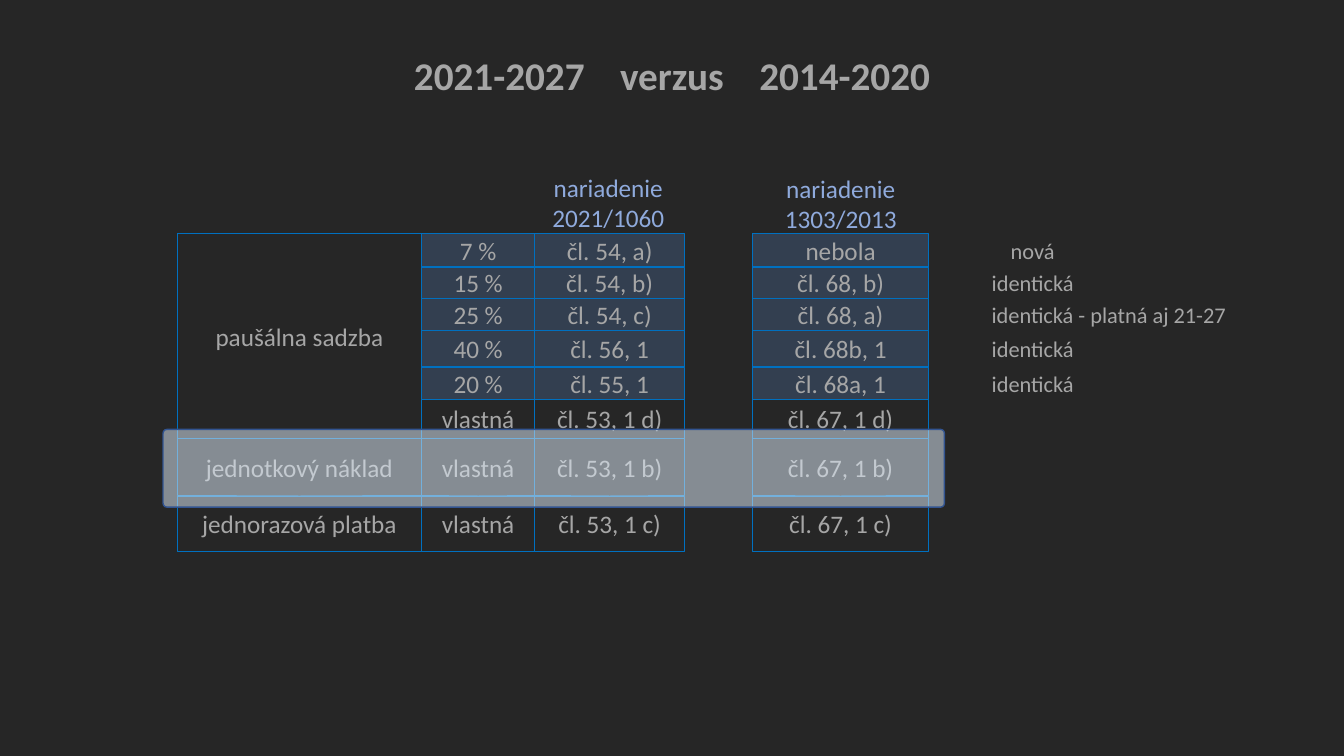
from pptx import Presentation
from pptx.dml.color import RGBColor
from pptx.enum.shapes import MSO_SHAPE
from pptx.enum.text import MSO_ANCHOR, MSO_AUTO_SIZE, PP_ALIGN
from pptx.oxml import parse_xml
from pptx.oxml.ns import nsdecls
from pptx.util import Cm, Pt

RECT, ROUND = MSO_SHAPE.RECTANGLE, MSO_SHAPE.ROUNDED_RECTANGLE
TOP, MIDDLE = MSO_ANCHOR.TOP, MSO_ANCHOR.MIDDLE
LEFT, CENTER = PP_ALIGN.LEFT, PP_ALIGN.CENTER
FIXED = MSO_AUTO_SIZE.NONE

FONT = "Calibri"
HUES = {
    "back": "262626", "text": "A6A6A6", "head": "8FAADC", "fill": "333F50",
    "line": "0070C0", "band": "DEEBF7", "edge": "325491",
}

TITLE = ["2021-2027", " ", "verzus", " ", "2014-2020"]
GAP = 19

EDGES = [5.89, 6.73, 7.53, 8.33, 9.25, 10.06, 11.05, 12.5, 13.89]
SHADED = 5

KINDS = [
    ("paušálna sadzba", 0, 6),
    ("jednotkový náklad", 6, 7),
    ("jednorazová platba", 7, 8),
]
KIND_COL = (4.47, 6.15)

COLUMNS = [
    (10.62, 2.86, ["7 %", "15 %", "25 %", "40 %", "20 %",
                   "vlastná", "vlastná", "vlastná"]),
    (13.48, 3.77, ["čl. 54, a)", "čl. 54, b)", "čl. 54, c)", "čl. 56, 1",
                   "čl. 55, 1", "čl. 53, 1 d)", "čl. 53, 1 b)", "čl. 53, 1 c)"]),
    (18.96, 4.45, ["nebola", "čl. 68, b)", "čl. 68, a)", "čl. 68b, 1",
                   "čl. 68a, 1", "čl. 67, 1 d)", "čl. 67, 1 b)", "čl. 67, 1 c)"]),
]

HEADS = [
    (13.44, 4.22, ["nariadenie", "2021/1060"]),
    (19.3, 4.24, ["nariadenie", "1303/2013"]),
]
HEAD_SIZE = (3.78, 1.8)

NOTES = ["nová", "identická", "identická - platná aj 21-27",
         "identická", "identická"]
LONG = 2
NOTE_COL = (23.8, 4.45)
LONG_COL = (24.74, 6.65)

BAND = (4.11, 10.82, 19.69, 1.96)


def tint(name):
    return RGBColor.from_string(HUES[name])


def add_run(para, text, size, hue, bold=False):
    run = para.add_run()
    run.text = text
    run.font.name = FONT
    run.font.size = Pt(size)
    run.font.bold = bold
    run.font.color.rgb = tint(hue)
    return run


def write(shape, lines, size, hue="text", align=CENTER, anchor=MIDDLE):
    frame = shape.text_frame
    frame.word_wrap = True
    frame.vertical_anchor = anchor
    for i, line in enumerate(lines):
        para = frame.add_paragraph() if i else frame.paragraphs[0]
        para.alignment = align
        add_run(para, line, size, hue)


def add_box(slide, kind, box, fill, line, width):
    shape = slide.shapes.add_shape(kind, *map(Cm, box))
    shape.shadow.inherit = False
    if fill:
        shape.fill.solid()
        shape.fill.fore_color.rgb = tint(fill)
    else:
        shape.fill.background()
    shape.line.color.rgb = tint(line)
    shape.line.width = Pt(width)
    return shape


def add_cell(slide, text, col, first, last, fill=None):
    left, width = col
    box = (left, EDGES[first], width, EDGES[last] - EDGES[first])
    write(add_box(slide, RECT, box, fill, "line", 0.75), [text], 18)


def add_title(slide):
    title = slide.shapes.title
    title.left, title.top, title.width, title.height = map(
        Cm, (2.33, 0.56, 29.21, 2.8))
    frame = title.text_frame
    frame.auto_size = FIXED
    frame.vertical_anchor = MIDDLE
    para = frame.paragraphs[0]
    para.alignment = CENTER
    para.line_spacing = 0.9
    for part in TITLE:
        run = add_run(para, part, 28, "text", True)
        if part == " ":
            run._r.get_or_add_rPr().set("spc", str(GAP * 100))


def add_band(slide):
    band = add_box(slide, ROUND, BAND, "band", "edge", 1)
    band.adjustments[0] = 0.05
    color = band.fill._xPr.solidFill[0]
    color.append(parse_xml(f'<a:alpha {nsdecls("a")} val="52000"/>'))


def main():
    deck = Presentation()
    deck.slide_width, deck.slide_height = Cm(33.87), Cm(19.05)
    slide = deck.slides.add_slide(deck.slide_layouts[5])
    slide.background.fill.solid()
    slide.background.fill.fore_color.rgb = tint("back")
    add_title(slide)

    for text, first, last in KINDS:
        add_cell(slide, text, KIND_COL, first, last)
    for left, width, texts in COLUMNS:
        for row, text in enumerate(texts):
            fill = "fill" if row < SHADED else None
            add_cell(slide, text, (left, width), row, row + 1, fill)

    for row, text in enumerate(NOTES):
        left, width = LONG_COL if row == LONG else NOTE_COL
        height = EDGES[row + 1] - EDGES[row]
        note = slide.shapes.add_textbox(
            Cm(left), Cm(EDGES[row]), Cm(width), Cm(height))
        write(note, [text], 16, align=LEFT if row == LONG else CENTER)

    add_band(slide)
    for left, top, lines in HEADS:
        head = slide.shapes.add_textbox(
            Cm(left), Cm(top), *map(Cm, HEAD_SIZE))
        write(head, lines, 18, "head", anchor=TOP)
    deck.save("out.pptx")


if __name__ == "__main__":
    main()
